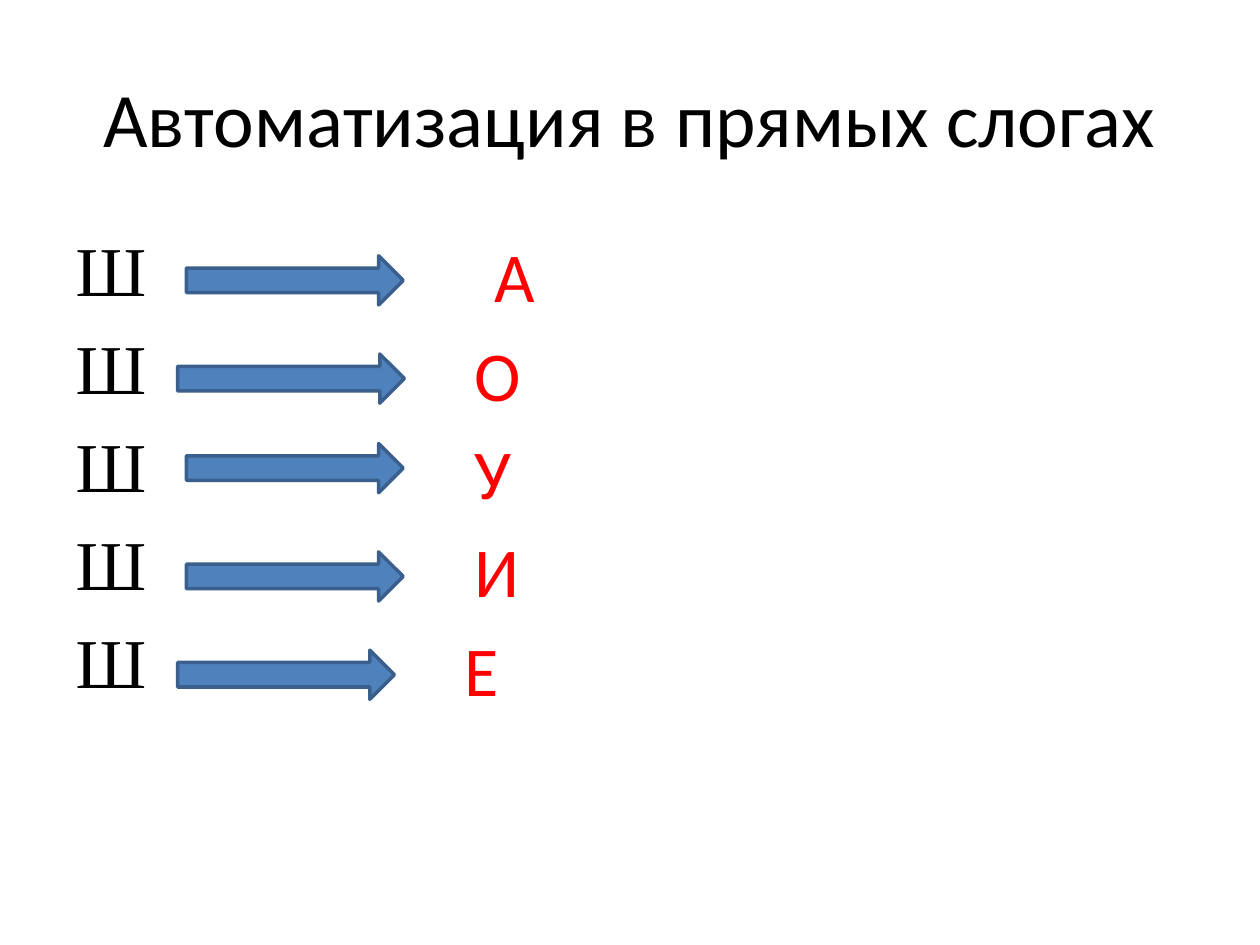
from dataclasses import dataclass

from lxml import etree
from pptx import Presentation
from pptx.dml.color import RGBColor
from pptx.enum.shapes import MSO_SHAPE
from pptx.enum.text import MSO_ANCHOR, MSO_AUTO_SIZE, PP_ALIGN
from pptx.oxml.ns import qn
from pptx.util import Inches, Pt

RIGHT_ARROW = MSO_SHAPE.RIGHT_ARROW
MIDDLE = MSO_ANCHOR.MIDDLE
CENTER = PP_ALIGN.CENTER
FIT_SHAPE = MSO_AUTO_SIZE.SHAPE_TO_FIT_TEXT


@dataclass(frozen=True)
class Theme:
    """Colours, fonts and type sizes of the slide."""

    ink: RGBColor = RGBColor(0, 0, 0)
    vowel: RGBColor = RGBColor(0xFF, 0, 0)
    arrow: RGBColor = RGBColor(0x4F, 0x81, 0xBD)
    arrow_edge: RGBColor = RGBColor(0x3A, 0x5F, 0x8C)
    sans: str = "Calibri"
    serif: str = "Times New Roman"
    title_size: int = 44
    letter_size: int = 40
    edge_width: int = 2


class SyllableSlide:
    """Holds the theme and the current slide and draws each kind of element."""

    def __init__(self, slide, theme):
        self.slide = slide
        self.theme = theme

    def style(self, paragraph, font, size, color):
        formats = {"name": font, "size": Pt(size)}
        for run in paragraph.runs:
            for attribute, value in formats.items():
                setattr(run.font, attribute, value)
            run.font.color.rgb = color

    def place(self, shape, left, top, width, height):
        bounds = {"left": left, "top": top, "width": width, "height": height}
        for attribute, value in bounds.items():
            setattr(shape, attribute, Inches(value))

    def title(self, wording, bounds):
        heading = self.slide.shapes.title
        self.place(heading, *bounds)
        heading.text_frame.text = wording
        heading.text_frame.vertical_anchor = MIDDLE
        paragraph = heading.text_frame.paragraphs[0]
        paragraph.alignment = CENTER
        self.style(paragraph, self.theme.sans, self.theme.title_size, self.theme.ink)

    def consonants(self, letters, bounds):
        body = self.slide.placeholders[1]
        self.place(body, *bounds)
        body.text_frame.text = "\n".join(letters)
        for paragraph in body.text_frame.paragraphs:
            self.style(paragraph, self.theme.serif, self.theme.letter_size, self.theme.ink)
            etree.SubElement(paragraph._p.get_or_add_pPr(), qn("a:buNone"))

    def arrow(self, *bounds):
        arrow = self.slide.shapes.add_shape(RIGHT_ARROW, *map(Inches, bounds))
        arrow.shadow.inherit = False
        arrow.fill.solid()
        arrow.fill.fore_color.rgb = self.theme.arrow
        arrow.line.color.rgb = self.theme.arrow_edge
        arrow.line.width = Pt(self.theme.edge_width)

    def vowel(self, letter, *bounds):
        frame = self.slide.shapes.add_textbox(*map(Inches, bounds)).text_frame
        formats = {"text": letter, "word_wrap": True, "auto_size": FIT_SHAPE}
        for attribute, value in formats.items():
            setattr(frame, attribute, value)
        self.style(frame.paragraphs[0], self.theme.sans, self.theme.letter_size, self.theme.vowel)


def main():
    deck = Presentation()
    deck.slide_width, deck.slide_height = Inches(10), Inches(7.5)
    page = SyllableSlide(deck.slides.add_slide(deck.slide_layouts[1]), Theme())

    syllables = [
        ("А", 3.83, 0.7, 1.48, 2.03, 1.72),
        ("О", 3.67, 0.44, 1.41, 2.81, 1.8),
        ("У", 3.67, 0.5, 1.48, 3.52, 1.72),
        ("И", 3.67, 0.47, 1.48, 4.38, 1.72),
        ("Е", 3.59, 0.36, 1.41, 5.16, 1.72),
    ]
    first_row, row_pitch, row_height, arrow_height = 1.8, 0.78, 0.77, 0.39

    page.title("Автоматизация в прямых слогах", (0.5, 0.3, 9, 1.25))
    page.consonants(["Ш"] * len(syllables), (0.5, 1.75, 9, 4.95))
    for row, syllable in enumerate(syllables):
        vowel, vowel_left, vowel_width, arrow_left, arrow_top, arrow_width = syllable
        page.arrow(arrow_left, arrow_top, arrow_width, arrow_height)
        page.vowel(vowel, vowel_left, first_row + row * row_pitch, vowel_width, row_height)

    deck.save("out.pptx")


if __name__ == "__main__":
    main()
